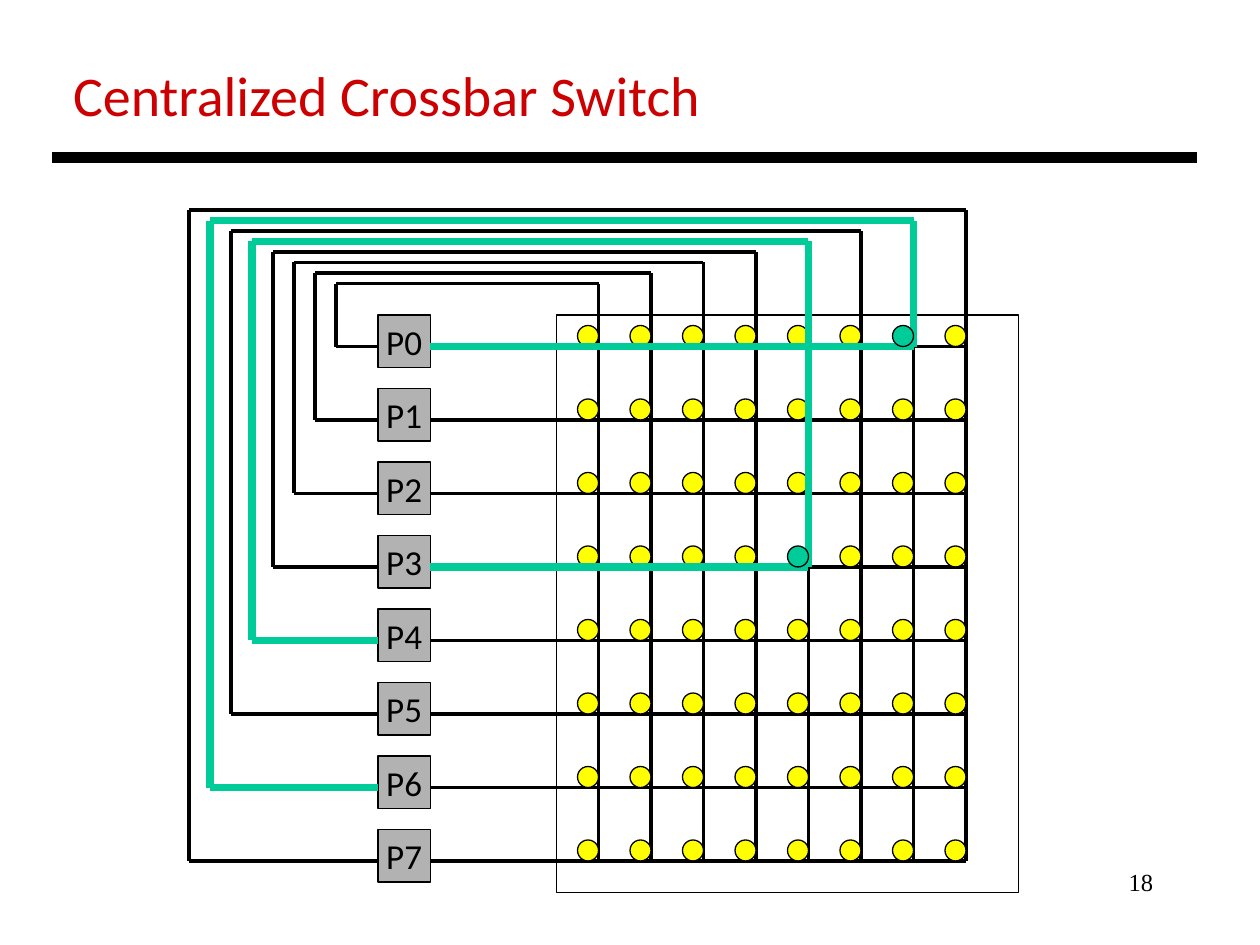
from pptx import Presentation
from pptx.dml.color import RGBColor
from pptx.enum.shapes import MSO_CONNECTOR, MSO_SHAPE
from pptx.enum.text import MSO_ANCHOR, PP_ALIGN
from pptx.oxml.ns import qn
from pptx.util import Inches, Pt
from lxml import etree

RECT, DISC = MSO_SHAPE.RECTANGLE, MSO_SHAPE.OVAL
LINE = MSO_CONNECTOR.STRAIGHT
TOP, MID = MSO_ANCHOR.TOP, MSO_ANCHOR.MIDDLE
LEFT, MIDDLE, RIGHT = PP_ALIGN.LEFT, PP_ALIGN.CENTER, PP_ALIGN.RIGHT

BLACK, WHITE, RED = "000000", "FFFFFF", "CC0000"
GREY, YELLOW, GREEN = "B2B2B2", "FFFF00", "00CC99"

# The slide is a grid of 120 by 90 units, 12 to the inch
PORTS = 8
BOX_X, BOX_SIZE = 36, 5
DOT = 2
ROUTES = [(0, 6), (3, 4)]  # sending port, receiving port


def unit(n):
    return Inches(n / 12)


def color(text):
    return RGBColor.from_string(text)


def row_y(port):
    return 33 + 7 * port


def col_x(port):
    return 57 + 5 * port


def loop_x(port):
    return 32 - 2 * port


def loop_y(port):
    return 27 - port


END_X, END_Y = col_x(PORTS - 1), row_y(PORTS - 1)


def add_text(frame, text, size, font, tint, align, anchor, wrap=False):
    frame.word_wrap = wrap
    frame.vertical_anchor = anchor
    para = frame.paragraphs[0]
    para.alignment = align
    run = para.add_run()
    run.text = text
    run.font.size = Pt(size)
    run.font.name = font
    run.font.color.rgb = color(tint)


def add_line(slide, start, end, tint=BLACK, width=2.25):
    line = slide.shapes.add_connector(LINE, *map(unit, start + end))
    line.line.color.rgb = color(tint)
    line.line.width = Pt(width)
    etree.SubElement(line._element.spPr, qn("a:effectLst"))


def add_path(slide, points, tint=BLACK, width=2.25):
    for start, end in zip(points, points[1:]):
        add_line(slide, start, end, tint, width)


def add_block(slide, kind, x, y, wide, high, fill):
    block = slide.shapes.add_shape(kind, *map(unit, (x, y, wide, high)))
    block.shadow.inherit = False
    block.fill.solid()
    block.fill.fore_color.rgb = color(fill)
    block.line.color.rgb = color(BLACK)
    block.line.width = Pt(0.75)
    return block


def add_dot(slide, row, col, fill):
    add_block(slide, DISC, col_x(col) - DOT, row_y(row) - DOT, DOT, DOT, fill)


def loop(port):
    """Points from the top of a column back to the left of its port."""
    x, y = loop_x(port), loop_y(port)
    return [(col_x(port), y), (x, y), (x, row_y(port)), (BOX_X, row_y(port))]


def add_head(slide):
    title = slide.shapes.title
    title.left, title.top = Inches(0.48), Inches(0.43)
    title.width, title.height = Inches(5.23), Inches(0.64)
    add_text(title.text_frame, "Centralized Crossbar Switch", 32, "Calibri",
             RED, LEFT, TOP)
    add_line(slide, (5, 15), (114, 15), width=6)


def add_number(slide):
    box = slide.shapes.add_textbox(*map(unit, (86, 82, 25, 6)))
    add_text(box.text_frame, "18", 14, "Times New Roman", BLACK, RIGHT, TOP,
             wrap=True)


def add_ports(slide):
    for port in range(PORTS):
        box = add_block(slide, RECT, BOX_X, row_y(port) - 3,
                        BOX_SIZE, BOX_SIZE, GREY)
        add_text(box.text_frame, f"P{port}", 20, "Calibri", BLACK, MIDDLE, MID)


def add_wires(slide):
    for port in range(PORTS):
        y, x = row_y(port), col_x(port)
        add_line(slide, (BOX_X + BOX_SIZE, y), (END_X, y))
        add_line(slide, (x, loop_y(port)), (x, END_Y))
        add_path(slide, loop(port))


def add_dots(slide):
    for row in range(PORTS):
        for col in range(PORTS):
            if (row, col) not in ROUTES:
                add_dot(slide, row, col, YELLOW)


def add_route(slide, source, target):
    y = row_y(source)
    points = [(BOX_X + BOX_SIZE, y), (col_x(target), y)] + loop(target)
    add_path(slide, points, GREEN, 4.5)
    add_dot(slide, source, target, GREEN)


def main():
    deck = Presentation()
    deck.slide_width, deck.slide_height = Inches(10), Inches(7.5)
    slide = deck.slides.add_slide(deck.slide_layouts[5])

    # Title, rule and page number
    add_head(slide)
    add_number(slide)

    # Ports and the switch with its wires
    add_ports(slide)
    add_block(slide, RECT, 53, 30, 44, 55, WHITE)
    add_wires(slide)
    add_dots(slide)

    # Active connections
    for source, target in ROUTES:
        add_route(slide, source, target)

    deck.save("out.pptx")


if __name__ == "__main__":
    main()
